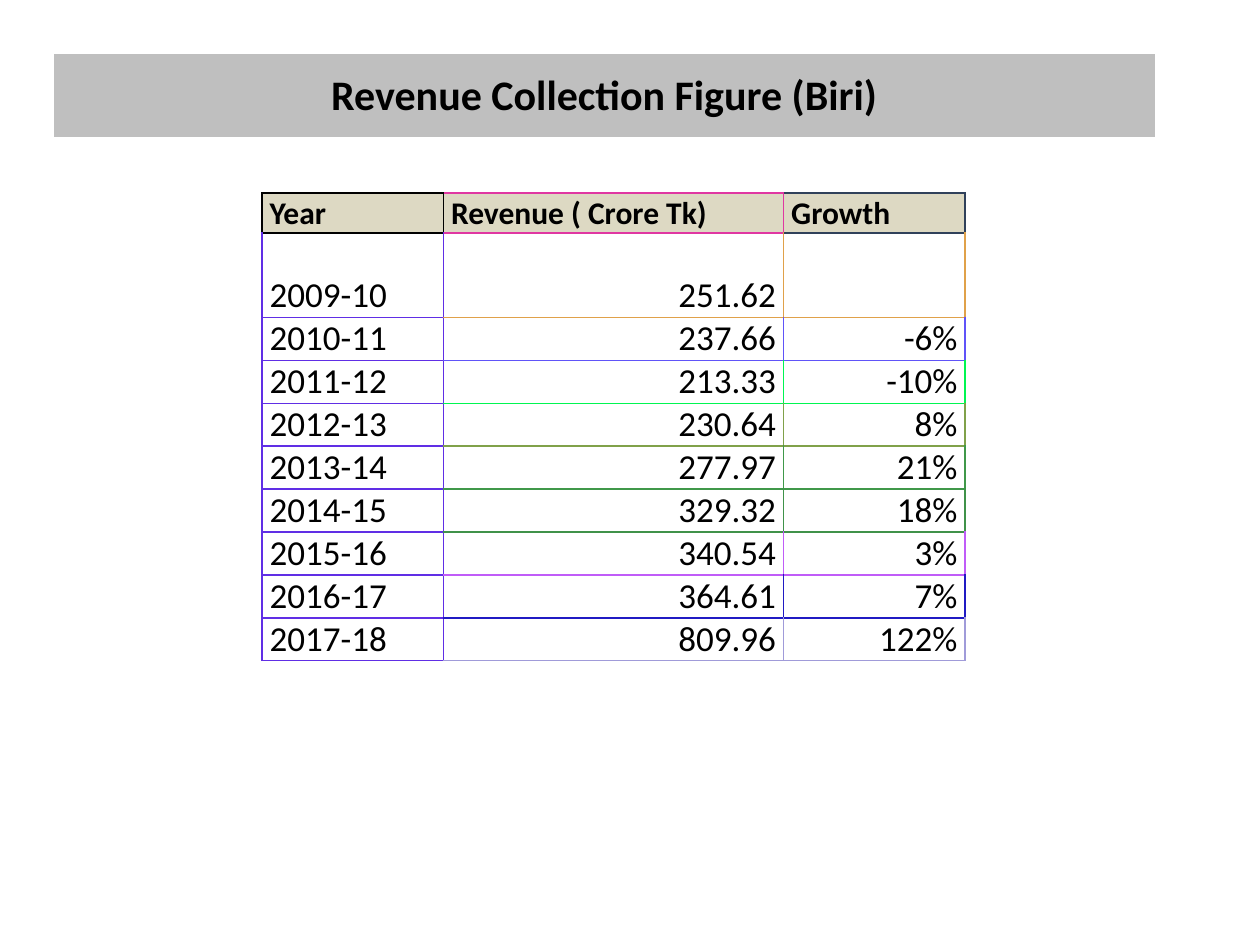
from dataclasses import dataclass

from lxml import etree
from pptx import Presentation
from pptx.dml.color import RGBColor
from pptx.enum.text import MSO_ANCHOR, PP_ALIGN
from pptx.oxml.ns import qn
from pptx.util import Inches, Pt

LEFT, CENTER, RIGHT = PP_ALIGN.LEFT, PP_ALIGN.CENTER, PP_ALIGN.RIGHT
MIDDLE, BOTTOM = MSO_ANCHOR.MIDDLE, MSO_ANCHOR.BOTTOM

BLACK = RGBColor(0x00, 0x00, 0x00)
WHITE = RGBColor(0xFF, 0xFF, 0xFF)
GRAY = RGBColor(0xBF, 0xBF, 0xBF)
TAN = RGBColor(0xDD, 0xD9, 0xC3)
PINK = RGBColor(0xE0, 0x37, 0xA2)
SLATE = RGBColor(0x30, 0x41, 0x5A)
INDIGO = RGBColor(0x60, 0x2E, 0xE5)
ORANGE = RGBColor(0xE0, 0xA1, 0x4A)
PERIWINKLE = RGBColor(0x60, 0x53, 0xF8)
BRIGHT_GREEN = RGBColor(0x00, 0xF6, 0x51)
OLIVE = RGBColor(0x80, 0xA1, 0x4A)
GREEN = RGBColor(0x40, 0x98, 0x4A)
DARK_GREEN = RGBColor(0x40, 0x92, 0x4A)
VIOLET = RGBColor(0xC0, 0x5C, 0xF8)
NAVY = RGBColor(0x20, 0x1A, 0xC3)
LAVENDER = RGBColor(0xA0, 0x9B, 0xD9)

FONT = "Calibri"
BORDER_WIDTH = Pt(1)


@dataclass(frozen=True)
class CellStyle:
    fill: RGBColor
    size: int
    bold: bool
    anchor: MSO_ANCHOR
    margins: tuple[float, float, float, float]  # left, top, right, bottom


@dataclass(frozen=True)
class YearRecord:
    year: str
    revenue: str
    growth: str
    border: RGBColor


TITLE_STYLE = CellStyle(GRAY, 24, True, MIDDLE, (0.01, 0.01, 0.01, 0))
HEADER_STYLE = CellStyle(TAN, 18, True, BOTTOM, (0.06, 0, 0.06, 0))
BODY_STYLE = CellStyle(WHITE, 20, False, BOTTOM, (0.06, 0, 0.06, 0))

HEADINGS = ("Year", "Revenue ( Crore Tk)", "Growth")
HEADING_BORDERS = (BLACK, PINK, SLATE)
RECORDS = (
    YearRecord("2009-10", "251.62", "", ORANGE),
    YearRecord("2010-11", "237.66", "-6%", PERIWINKLE),
    YearRecord("2011-12", "213.33", "-10%", BRIGHT_GREEN),
    YearRecord("2012-13", "230.64", "8%", OLIVE),
    YearRecord("2013-14", "277.97", "21%", GREEN),
    YearRecord("2014-15", "329.32", "18%", DARK_GREEN),
    YearRecord("2015-16", "340.54", "3%", VIOLET),
    YearRecord("2016-17", "364.61", "7%", NAVY),
    YearRecord("2017-18", "809.96", "122%", LAVENDER),
)
COLUMN_WIDTHS = (1.44, 2.7, 1.44)
ROW_HEIGHTS = (0.32, 0.67) + (0.32,) * (len(RECORDS) - 1)


def add_plain_table(slide, left: float, top: float, widths: tuple, heights: tuple):
    """Add a table without header or band styling."""
    table = slide.shapes.add_table(
        len(heights), len(widths), Inches(left), Inches(top),
        Inches(sum(widths)), Inches(sum(heights))).table
    table.first_row = table.horz_banding = False
    for column, width in zip(table.columns, widths):
        column.width = Inches(width)
    for row, height in zip(table.rows, heights):
        row.height = Inches(height)
    return table


def set_borders(cell, colors: dict[str, RGBColor]) -> None:
    """Draw cell borders; call before the fill, which follows them in the XML."""
    properties = cell._tc.get_or_add_tcPr()
    for side in "LRTB":
        line = etree.SubElement(properties, qn(f"a:ln{side}"), w=str(BORDER_WIDTH))
        fill = etree.SubElement(line, qn("a:solidFill"))
        etree.SubElement(fill, qn("a:srgbClr"), val=str(colors[side]))


def write_cell(cell, text: str, style: CellStyle, alignment: PP_ALIGN) -> None:
    cell.fill.solid()
    cell.fill.fore_color.rgb = style.fill
    cell.vertical_anchor = style.anchor
    for side, margin in zip(("left", "top", "right", "bottom"), style.margins):
        setattr(cell, f"margin_{side}", Inches(margin))
    paragraph = cell.text_frame.paragraphs[0]
    paragraph.alignment = alignment
    if text:
        run = paragraph.add_run()
        run.text = text
        font_format = {"name": FONT, "size": Pt(style.size), "bold": style.bold}
        for name, value in font_format.items():
            setattr(run.font, name, value)
        run.font.color.rgb = BLACK


def add_title(slide) -> None:
    table = add_plain_table(slide, 0.42, 0.42, (8.75,), (0.67,))
    write_cell(table.cell(0, 0), "Revenue Collection Figure (Biri)", TITLE_STYLE, CENTER)


def add_revenue_table(slide) -> None:
    table = add_plain_table(slide, 2.08, 1.53, COLUMN_WIDTHS, ROW_HEIGHTS)
    texts = [HEADINGS] + [(r.year, r.revenue, r.growth) for r in RECORDS]
    borders = [HEADING_BORDERS] + [(INDIGO, r.border, r.border) for r in RECORDS]
    for row, row_texts in enumerate(texts):
        style = BODY_STYLE if row else HEADER_STYLE
        for column, text in enumerate(row_texts):
            cell = table.cell(row, column)
            # A cell owns its right and bottom lines and shares the others;
            # the growth column keeps its own left line below the header
            own = borders[row][column]
            set_borders(cell, {
                "L": borders[row][max(column - 1, 0)],
                "T": borders[max(row - 1, 0)][column],
                "R": own,
                "B": own,
            })
            write_cell(cell, text, style, RIGHT if row and column else LEFT)


def main() -> None:
    presentation = Presentation()
    presentation.slide_width, presentation.slide_height = Inches(10), Inches(7.5)
    slide = presentation.slides.add_slide(presentation.slide_layouts[6])
    add_title(slide)
    add_revenue_table(slide)
    presentation.save("out.pptx")


if __name__ == "__main__":
    main()
